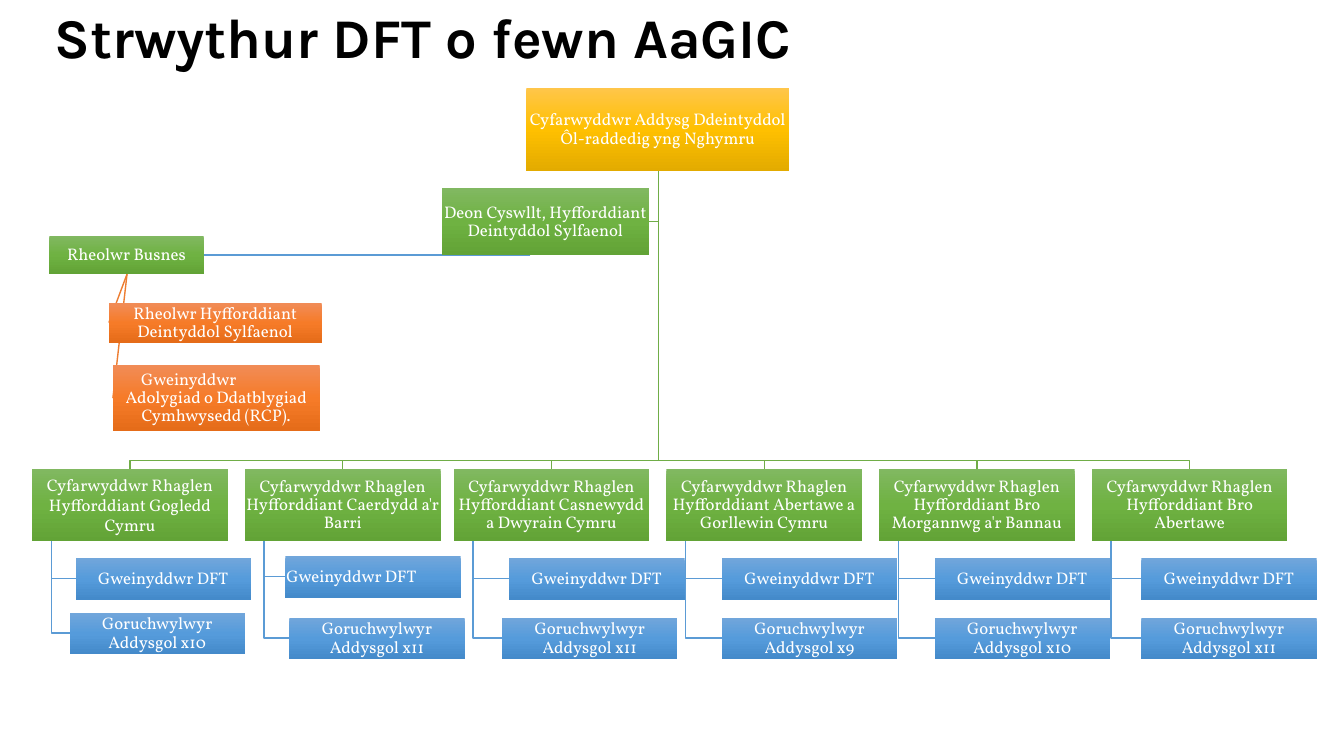
from dataclasses import dataclass

from lxml import etree
from pptx import Presentation
from pptx import util as u
from pptx.dml.color import RGBColor
from pptx.enum import shapes, text
from pptx.oxml.ns import qn

PX = 9144  # EMU per px, 100 px to the inch
Point = tuple[int, int]


@dataclass(frozen=True)
class Tone:
    line: str
    gradient: tuple[str, str, str]


@dataclass(frozen=True)
class Theme:
    gold: Tone = Tone("FFC000", ("FFC64B", "FFC000", "E3AB00"))
    green: Tone = Tone("70AD47", ("81B861", "6FB242", "62A336"))
    blue: Tone = Tone("5B9BD5", ("71A6DB", "559BDB", "448ACA"))
    orange: Tone = Tone("ED7D31", ("F18C57", "F67B28", "E56C19"))
    title_color: str = "000000"
    box_color: str = "FFFFFF"
    title_font: str = "Karla"
    box_font: str = "Vollkorn"
    title_size: int = 40
    title_leading: int = 48
    box_size: int = 12
    line_width: int = 1


@dataclass(frozen=True)
class Box:
    label: str
    left: int
    top: int
    width: int
    height: int
    tone: Tone
    spacing: float = 0.9
    align: text.PP_ALIGN = text.PP_ALIGN.CENTER
    lead: str = ""  # first line, indented from the left

    @property
    def center(self) -> int:
        return self.left + self.width // 2

    @property
    def middle(self) -> int:
        return self.top + self.height // 2

    @property
    def bottom(self) -> int:
        return self.top + self.height


@dataclass(frozen=True)
class Team:
    region: str
    left: int
    admin_at: Point
    supervisors_at: Point
    supervisors: int
    spacing: float = 0.9
    admin_align: text.PP_ALIGN = text.PP_ALIGN.CENTER


THEME = Theme()
LEAD_INDENT = 27
BUS_Y = 457
STEM_INSET = 19

HEAD = Box("Cyfarwyddwr Addysg Ddeintyddol Ôl-raddedig yng Nghymru",
           522, 87, 261, 83, THEME.gold)
DEAN = Box("Deon Cyswllt, Hyfforddiant Deintyddol Sylfaenol",
           438, 187, 206, 66, THEME.green)
BUSINESS = Box("Rheolwr Busnes", 49, 234, 153, 38, THEME.green)
TRAINING = Box("Rheolwr Hyfforddiant Deintyddol Sylfaenol",
               108, 301, 211, 39, THEME.orange)
REVIEW = Box("Adolygiad o Ddatblygiad Cymhwysedd (RCP).",
             112, 362, 205, 66, THEME.orange, lead="Gweinyddwr")

TEAMS = [
    Team("Gogledd Cymru", 32, (75, 554), (69, 608), 10, spacing=1.0),
    Team("Caerdydd a'r Barri", 243, (283, 552), (287, 613), 11,
         admin_align=text.PP_ALIGN.LEFT),
    Team("Casnewydd a Dwyrain Cymru", 450, (505, 554), (498, 613), 11),
    Team("Abertawe a Gorllewin Cymru", 661, (716, 554), (716, 613), 9),
    Team("Bro Morgannwg a'r Bannau", 872, (927, 554), (927, 613), 10),
    Team("Bro Abertawe", 1083, (1132, 554), (1132, 613), 11),
]


def add_text(paragraph, content: str, *, font: str, size: int, color: str,
             bold: bool = False, align=text.PP_ALIGN.CENTER,
             spacing=0.9, indent: int = 0) -> None:
    paragraph.alignment = align
    paragraph.line_spacing = spacing
    if indent:
        paragraph._p.get_or_add_pPr().set("marL", str(indent * PX))
    run = paragraph.add_run()
    run.text = content
    run.font.name = font
    run.font.size = u.Pt(size)
    run.font.bold = bold
    run.font.color.rgb = RGBColor.from_string(color)


def fill_gradient(shape, tone: Tone) -> None:
    shape.fill.gradient()
    shape.fill.gradient_angle = 270
    stops = shape.element.find(".//" + qn("a:gsLst"))
    for stop in list(stops):
        stops.remove(stop)
    for index, color in enumerate(tone.gradient):
        stop = etree.SubElement(stops, qn("a:gs"), pos=str(index * 50000))
        etree.SubElement(stop, qn("a:srgbClr"), val=color)


def draw_box(slide, box: Box) -> None:
    shape = slide.shapes.add_shape(
        shapes.MSO_SHAPE.RECTANGLE,
        *(PX * n for n in (box.left, box.top, box.width, box.height)))
    shape.shadow.inherit = False
    shape.line.fill.background()
    fill_gradient(shape, box.tone)
    frame = shape.text_frame
    frame.word_wrap = True
    frame.vertical_anchor = text.MSO_ANCHOR.MIDDLE
    frame.margin_left = frame.margin_right = PX
    frame.margin_top = frame.margin_bottom = PX
    style = dict(font=THEME.box_font, size=THEME.box_size,
                 color=THEME.box_color, spacing=box.spacing)
    paragraph = frame.paragraphs[0]
    if box.lead:
        add_text(paragraph, box.lead, align=text.PP_ALIGN.LEFT,
                 indent=LEAD_INDENT, **style)
        paragraph = frame.add_paragraph()
    add_text(paragraph, box.label, align=box.align, **style)


def style_line(shape, tone: Tone) -> None:
    shape.line.color.rgb = RGBColor.from_string(tone.line)
    shape.line.width = u.Pt(THEME.line_width)


def draw_straight(slide, start: Point, end: Point, tone: Tone) -> None:
    connector = slide.shapes.add_connector(
        shapes.MSO_CONNECTOR.STRAIGHT, *(PX * n for n in start + end))
    style_line(connector, tone)
    etree.SubElement(connector.element.spPr, qn("a:effectLst"))


def draw_bent(slide, points: list[Point], tone: Tone) -> None:
    """Draw an open line through the points."""
    start, *rest = [(x * PX, y * PX) for x, y in points]
    builder = slide.shapes.build_freeform(*start)
    builder.add_line_segments(rest, close=False)
    shape = builder.convert_to_shape()
    shape.shadow.inherit = False
    shape.fill.background()
    style_line(shape, tone)


def team_boxes(team: Team) -> tuple[Box, Box, Box]:
    """Return the director, the administrator and the supervisors."""
    return (
        Box(f"Cyfarwyddwr Rhaglen Hyfforddiant {team.region}",
            team.left, 465, 194, 72, THEME.green, team.spacing),
        Box("Gweinyddwr DFT", *team.admin_at, 174, 41, THEME.blue,
            align=team.admin_align),
        Box(f"Goruchwylwyr Addysgol x{team.supervisors}",
            *team.supervisors_at, 174, 41, THEME.blue),
    )


def draw_title(slide, content: str) -> None:
    title = slide.shapes.title
    title.left, title.top, title.width, title.height = (
        PX * n for n in (44, 25, 1191, 49))
    frame = title.text_frame
    frame.auto_size = text.MSO_AUTO_SIZE.NONE
    frame.vertical_anchor = text.MSO_ANCHOR.BOTTOM
    add_text(frame.paragraphs[0], content, font=THEME.title_font,
             size=THEME.title_size, color=THEME.title_color, bold=True,
             align=text.PP_ALIGN.LEFT, spacing=u.Pt(THEME.title_leading))


def main() -> None:
    presentation = Presentation()
    presentation.slide_width, presentation.slide_height = 1333 * PX, 750 * PX
    slide = presentation.slides.add_slide(presentation.slide_layouts[5])
    draw_title(slide, "Strwythur DFT o fewn AaGIC")

    root = (HEAD.center + 1, HEAD.bottom)
    foot = (BUSINESS.center + 1, BUSINESS.bottom)
    draw_straight(slide, foot, (REVIEW.left, REVIEW.middle), THEME.orange)
    draw_straight(slide, foot, (TRAINING.left, TRAINING.middle), THEME.orange)
    draw_straight(slide, (526, BUSINESS.middle),
                  (BUSINESS.left + BUSINESS.width, BUSINESS.middle), THEME.blue)
    draw_bent(slide, [root, (root[0], DEAN.middle),
                      (DEAN.left + DEAN.width, DEAN.middle)], THEME.green)

    teams = [team_boxes(team) for team in TEAMS]
    for director, *staff in teams:
        draw_bent(slide, [root, (root[0], BUS_Y), (director.center, BUS_Y),
                          (director.center, director.top)], THEME.green)
        stem = director.left + STEM_INSET
        for member in staff:
            draw_bent(slide, [(stem, director.bottom), (stem, member.middle),
                              (member.left, member.middle)], THEME.blue)

    team_members = [box for team in teams for box in team]
    for box in [HEAD, *team_members, DEAN, BUSINESS, TRAINING, REVIEW]:
        draw_box(slide, box)
    presentation.save("out.pptx")


if __name__ == "__main__":
    main()
